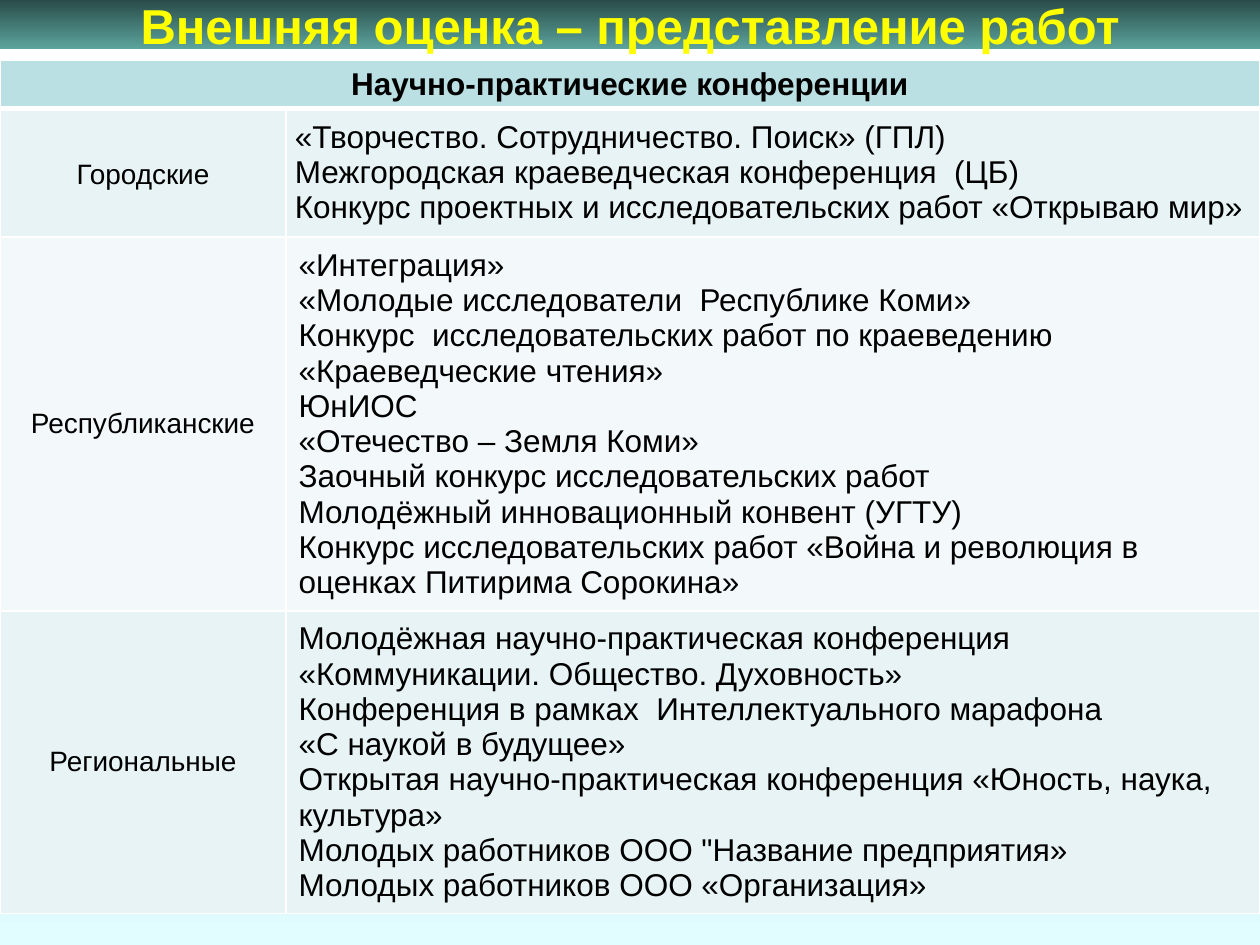
from copy import deepcopy
from lxml.etree import SubElement
from pptx import Presentation
from pptx.dml.color import RGBColor
from pptx.enum.shapes import MSO_SHAPE
from pptx.enum.text import MSO_ANCHOR, MSO_AUTO_SIZE, PP_ALIGN
from pptx.oxml.ns import qn
from pptx.util import Inches, Pt

TITLE = "Внешняя оценка – представление работ"
TABLE_HEADING = "Научно-практические конференции"
LEVELS = [
    {"level": "Городские", "height": 1.02, "insets": (0.07, 0), "level_spacing": 1.15,
     "events": [
         "«Творчество. Сотрудничество. Поиск» (ГПЛ)",
         "Межгородская краеведческая конференция  (ЦБ)",
         "Конкурс проектных и исследовательских работ «Открываю мир»",
     ]},
    {"level": "Республиканские", "height": 2.97, "insets": (0.1, 0.05), "level_spacing": 1.0,
     "events": [
         "«Интеграция»",
         "«Молодые исследователи  Республике Коми»",
         "Конкурс  исследовательских работ по краеведению",
         "«Краеведческие чтения»",
         "ЮнИОС",
         "«Отечество – Земля Коми»",
         "Заочный конкурс исследовательских работ",
         "Молодёжный инновационный конвент (УГТУ)",
         "Конкурс исследовательских работ «Война и революция в оценках Питирима Сорокина»",
     ]},
    {"level": "Региональные", "height": 2.4, "insets": (0.1, 0.05), "level_spacing": 1.0,
     "events": [
         "Молодёжная научно-практическая конференция «Коммуникации. Общество. Духовность»",
         "Конференция в рамках  Интеллектуального марафона",
         "«С наукой в будущее»",
         "Открытая научно-практическая конференция «Юность, наука, культура»",
         "Молодых работников ООО \"Название предприятия»",
         "Молодых работников ООО «Организация»",
     ]},
]

THEME = {
    "font": "Arial",
    "title_size": 28, "event_size": 18, "level_size": 16,
    "title_color": "FFFF00", "text": "000000", "border": "FFFFFF",
    "heading_fill": "BBE0E3", "bands": ("E7F3F4", "F3F9FA"),
    "title_gradient": ("2A4C49", "5CA49D"),
    "panel_gradient": ("E1FDFF", "BBE0E3", "E1FDFF"),
}
SLIDE_WIDTH, SLIDE_HEIGHT = 10, 7.5
TITLE_HEIGHT, PANEL_TOP = 0.39, 0.78
TABLE_TOP, HEADING_HEIGHT = 0.48, 0.38
COLUMNS = (2.27, 7.73)
THIN, THICK = 1, 3


def write(frame, *lines, size, color=THEME["text"], bold=False,
          align=PP_ALIGN.LEFT, spacing=1.0):
    for index, line in enumerate(lines):
        paragraph = frame.add_paragraph() if index else frame.paragraphs[0]
        paragraph.text = line
        paragraph.alignment = align
        paragraph.line_spacing = spacing
        paragraph.font.name = THEME["font"]
        paragraph.font.size = Pt(size)
        paragraph.font.bold = bold
        paragraph.font.color.rgb = RGBColor.from_string(color)


def fill_vertical(fill, colors):
    fill.gradient()
    fill.gradient_angle = 270
    stops = fill.gradient_stops
    stop_list = stops[0]._gs.getparent()
    for _ in colors[len(stops):]:
        stop_list.append(deepcopy(stop_list[-1]))
    for index, (stop, color) in enumerate(zip(fill.gradient_stops, colors)):
        stop.position = index / (len(colors) - 1)
        stop.color.rgb = RGBColor.from_string(color)


def style_cell(cell, fill, insets=(0.1, 0.05), top=THIN, bottom=THIN):
    cell.vertical_anchor = MSO_ANCHOR.MIDDLE
    cell.margin_left = cell.margin_right = Inches(insets[0])
    cell.margin_top = cell.margin_bottom = Inches(insets[1])
    properties = cell._tc.get_or_add_tcPr()
    for side, width in (("L", THIN), ("R", THIN), ("T", top), ("B", bottom)):
        line = SubElement(properties, qn(f"a:ln{side}"), w=str(Pt(width)))
        solid = SubElement(line, qn("a:solidFill"))
        SubElement(solid, qn("a:srgbClr"), val=THEME["border"])
    cell.fill.solid()
    cell.fill.fore_color.rgb = RGBColor.from_string(fill)


def add_panel(slide):
    panel = slide.shapes.add_shape(
        MSO_SHAPE.RECTANGLE, 0, Inches(PANEL_TOP),
        Inches(SLIDE_WIDTH), Inches(SLIDE_HEIGHT - PANEL_TOP))
    panel.shadow.inherit = False
    panel.line.fill.background()
    fill_vertical(panel.fill, THEME["panel_gradient"])


def add_title(slide):
    title = slide.shapes.title
    title.left, title.top = 0, 0
    title.width, title.height = Inches(SLIDE_WIDTH), Inches(TITLE_HEIGHT)
    fill_vertical(title.fill, THEME["title_gradient"])
    frame = title.text_frame
    frame.auto_size = MSO_AUTO_SIZE.NONE
    frame.word_wrap = False
    frame.vertical_anchor = MSO_ANCHOR.MIDDLE
    write(frame, TITLE, size=THEME["title_size"], color=THEME["title_color"],
          bold=True, align=PP_ALIGN.CENTER)


def add_conferences(slide):
    heights = [HEADING_HEIGHT] + [entry["height"] for entry in LEVELS]
    table = slide.shapes.add_table(
        len(heights), len(COLUMNS), 0, Inches(TABLE_TOP),
        Inches(SLIDE_WIDTH), Inches(sum(heights))).table
    for column, width in zip(table.columns, COLUMNS):
        column.width = Inches(width)
    for row, height in zip(table.rows, heights):
        row.height = Inches(height)

    heading = table.cell(0, 0)
    heading.merge(table.cell(0, 1))
    for cell in table.rows[0].cells:
        style_cell(cell, THEME["heading_fill"], bottom=THICK)
    write(heading.text_frame, TABLE_HEADING, size=THEME["event_size"],
          bold=True, align=PP_ALIGN.CENTER)

    for index, entry in enumerate(LEVELS):
        level, events = table.rows[index + 1].cells
        for cell in (level, events):
            style_cell(cell, THEME["bands"][index % 2], entry["insets"],
                       top=THIN if index else THICK)
        write(level.text_frame, entry["level"], size=THEME["level_size"],
              align=PP_ALIGN.CENTER, spacing=entry["level_spacing"])
        write(events.text_frame, *entry["events"], size=THEME["event_size"])


def main():
    deck = Presentation()
    deck.slide_width, deck.slide_height = Inches(SLIDE_WIDTH), Inches(SLIDE_HEIGHT)
    slide = deck.slides.add_slide(deck.slide_layouts[5])
    add_panel(slide)
    add_title(slide)
    add_conferences(slide)
    deck.save("out.pptx")


if __name__ == "__main__":
    main()
